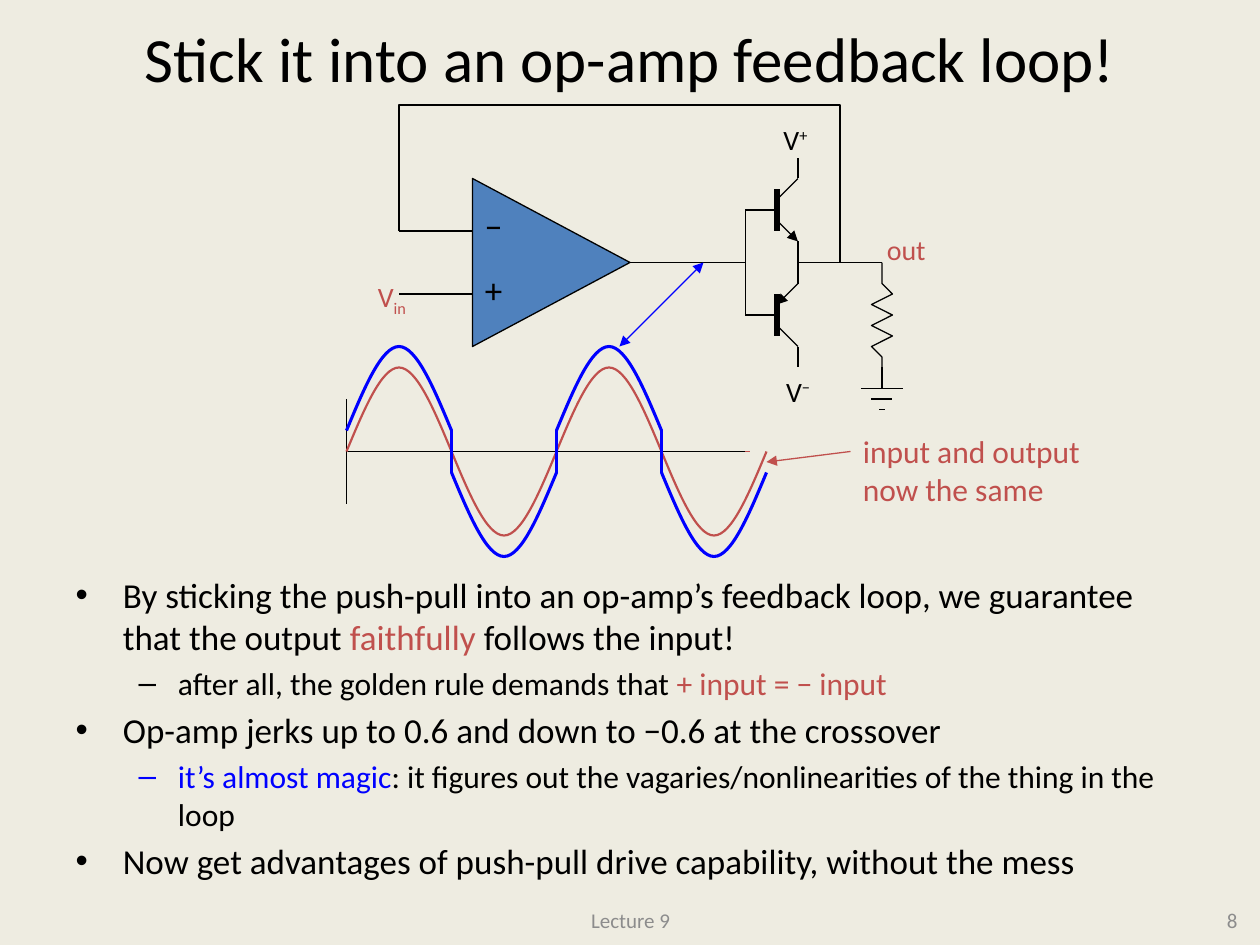
from dataclasses import dataclass
from lxml.etree import SubElement
from pptx import Presentation
from pptx.dml.color import RGBColor
from pptx.enum.shapes import MSO_CONNECTOR as Connector, MSO_SHAPE as Shape
from pptx.enum.text import MSO_ANCHOR as Anchor, MSO_AUTO_SIZE as AutoSize, PP_ALIGN as Align
from pptx.oxml.ns import qn
from pptx.util import Inches, Pt


@dataclass(frozen=True)
class Theme:
    font: str = "Calibri"
    paper: str = "EEECE1"
    ink: str = "000000"
    red: str = "C0504D"
    blue: str = "0000FF"
    amp: str = "4F81BD"
    grey: str = "8C8C8C"
    title: int = 36
    body: tuple = (20, 18)
    sign: int = 20
    label: int = 16
    note: int = 18
    footer: int = 12


T = Theme()
CELL = Inches(1) // 12  # the drawing sits on a grid of twelve cells to the inch

TITLE = "Stick it into an op-amp feedback loop!"
# Each bullet: level, then runs of (text, colour)
BULLETS = [
    (0, [("By sticking the push-pull into an op-amp’s feedback loop, we guarantee that the output ", T.ink),
         ("faithfully", T.red), (" follows the input!", T.ink)]),
    (1, [("after all, the golden rule demands that ", T.ink), ("+ input = − input", T.red)]),
    (0, [("Op-amp jerks up to 0.6 and down to −0.6 at the crossover", T.ink)]),
    (1, [("it’s almost magic", T.blue),
         (": it figures out the vagaries/nonlinearities of the thing in the loop", T.ink)]),
    (0, [("Now get advantages of push-pull drive capability, without the mess", T.ink)]),
]
# Each label: box in inches, paragraphs of (text, baseline shift) runs, size, colour, alignment
LABELS = [
    ((3.75, 1.57, 0.35, 0.43), [[("−", 0)]], T.sign, T.ink, Align.LEFT),
    ((3.75, 2.08, 0.36, 0.43), [[("+", 0)]], T.sign, T.ink, Align.LEFT),
    ((2.85, 2.17, 0.47, 0.37), [[("V", 0), ("in", -25)]], T.label, T.red, Align.RIGHT),
    ((6.94, 1.8, 0.51, 0.37), [[("out", 0)]], T.label, T.red, Align.LEFT),
    ((6.12, 0.92, 0.44, 0.37), [[("V", 0), ("+", 30)]], T.label, T.ink, Align.LEFT),
    ((6.14, 2.92, 0.43, 0.37), [[("V", 0), ("−", 30)]], T.label, T.ink, Align.LEFT),
    ((6.75, 3.38, 2.06, 0.7), [[("input and output", 0)], [("now the same", 0)]],
     T.note, T.red, Align.LEFT),
]
FOOTERS = [((3.42, 7.1, 3.17, 0.4), "Lecture 9", Align.CENTER),
           ((7.59, 7.1, 2.33, 0.4), "8", Align.RIGHT)]

# Circuit parts in grid cells
WIRES = [
    ((45, 28), (38, 28)), ((45, 22), (38, 22)), ((60, 25), (68, 25)),  # op-amp pins
    ((76, 25), (84, 25)), ((71, 20), (71, 30)), ((71, 25), (66, 25)),  # output, bases
    ((84, 35), (84, 37)),
]
GROUND_BARS = [(37, 2), (38, 1), (39, 0.25)]  # row, half width
FEEDBACK = [(38, 22), (38, 10), (80, 10), (80, 25)]
RESISTOR = [(84, 25), (84, 27), *[(85 if i % 2 == 0 else 83, 28 + i) for i in range(6)],
            (84, 34), (84, 35)]
WAVE_LEFT, WAVE_AXIS, HALF_PERIOD, AMPLITUDE = 33, 43, 10, 8
JUMP = 2  # crossover step on each side of the axis

prs = Presentation()
prs.slide_width, prs.slide_height = Inches(10), Inches(7.5)
slide = prs.slides.add_slide(prs.slide_layouts[1])
slide.background.fill.solid()
slide.background.fill.fore_color.rgb = RGBColor.from_string(T.paper)


def place(shape, box):
    shape.left, shape.top, shape.width, shape.height = map(Inches, box)


def write(paragraph, text, *, size, color, shift=0):
    run = paragraph.add_run()
    run.text = text
    run.font.name, run.font.size = T.font, Pt(size)
    run.font.color.rgb = RGBColor.from_string(color)
    if shift:
        run.font._element.set("baseline", str(shift * 1000))


def label(box, lines, *, size, color, align, wrap=False):
    shape = slide.shapes.add_textbox(*map(Inches, box))
    frame = shape.text_frame
    frame.word_wrap = wrap
    if wrap:
        frame.vertical_anchor = Anchor.MIDDLE
    else:
        frame.auto_size = AutoSize.SHAPE_TO_FIT_TEXT
    for i, runs in enumerate(lines):
        paragraph = frame.add_paragraph() if i else frame.paragraphs[0]
        paragraph.alignment = align
        for text, shift in runs:
            write(paragraph, text, size=size, color=color, shift=shift)


def stroke(line, color, width):
    line.width = Pt(width)
    line.color.rgb = RGBColor.from_string(color)


def wire(start, end, color=T.ink, width=0.75, arrows=()):
    """Straight line between grid points; arrows may name headEnd, tailEnd."""
    ends = [round(v * CELL) for v in (*start, *end)]
    connector = slide.shapes.add_connector(Connector.STRAIGHT, *ends)
    stroke(connector.line, color, width)
    properties = connector._element.spPr
    for arrow in arrows:
        SubElement(properties.find(qn("a:ln")), qn(f"a:{arrow}"), type="triangle")
    SubElement(properties, qn("a:effectLst"))


def outline(points, color=T.ink, width=0.75, curved=False):
    """Open outline through grid points; if curved, each three points make a Bézier segment."""
    points = [(round(x * CELL), round(y * CELL)) for x, y in points]
    builder = slide.shapes.build_freeform(*points[0])
    builder.add_line_segments(points[1:], close=False)
    shape = builder.convert_to_shape()
    shape.fill.background()
    shape.shadow.inherit = False
    stroke(shape.line, color, width)
    if curved:
        track = shape._element.find(".//" + qn("a:path"))
        steps = track.findall(qn("a:lnTo"))
        for i in range(0, len(steps), 3):
            curve = SubElement(track, qn("a:cubicBezTo"))
            for step in steps[i:i + 3]:
                curve.append(step[0])
                track.remove(step)


def transistor(row, down):
    """Base at the given row; down is 1 for NPN and -1 for the mirrored PNP."""
    def at(column, offset):
        return column, row + down * offset

    wire(at(74, -2), at(74, 2), width=3)
    wire(at(74, -1), at(76, -3))
    wire(at(76, -3), at(76, -5))
    wire(at(74, 0), at(71, 0))
    wire(at(76, 3), at(76, 5))
    inner, outer = (74, row + 1), (76, row + 3)
    if down < 0:
        inner, outer = at(76, 3), at(74, 1)
    wire(inner, outer, arrows=["tailEnd"])


def wave(color, width, jump=0):
    rise = [0, AMPLITUDE / 2, AMPLITUDE, AMPLITUDE, AMPLITUDE, AMPLITUDE / 2, 0]
    for half in range(4):
        left = WAVE_LEFT + half * HALF_PERIOD
        up = -1 if half % 2 == 0 else 1
        outline([(left + i * HALF_PERIOD / 6, WAVE_AXIS + up * (jump + y))
                 for i, y in enumerate(rise)], color, width, curved=True)
        if jump and half:
            wire((left, WAVE_AXIS - jump), (left, WAVE_AXIS + jump), color, width)


title, body = slide.placeholders
place(title, (0.75, -0.17, 8.5, 1.25))
write(title.text_frame.paragraphs[0], TITLE, size=T.title, color=T.ink)
place(body, (0.5, 4.5, 8.92, 2.75))
for i, (level, runs) in enumerate(BULLETS):
    bullet = body.text_frame.add_paragraph() if i else body.text_frame.paragraphs[0]
    bullet.level = level
    for text, color in runs:
        write(bullet, text, size=T.body[level], color=color)
for box, text, align in FOOTERS:
    label(box, [[(text, 0)]], size=T.footer, color=T.grey, align=align, wrap=True)

amp = slide.shapes.add_shape(Shape.ISOSCELES_TRIANGLE,
                             *[round(v * CELL) for v in (44.5, 17.5, 16, 15)])
amp.rotation = 90
amp.shadow.inherit = False
amp.fill.solid()
amp.fill.fore_color.rgb = RGBColor.from_string(T.amp)
stroke(amp.line, T.ink, 0.75)

for start, end in WIRES:
    wire(start, end)
for row, half_width in GROUND_BARS:
    wire((84 - half_width, row), (84 + half_width, row))
transistor(20, 1)
transistor(30, -1)
outline(RESISTOR)
outline(FEEDBACK)

wire((WAVE_LEFT, 38), (WAVE_LEFT, 48))
wire((33.5, WAVE_AXIS), (71.4, WAVE_AXIS), T.red)
wire((WAVE_LEFT, WAVE_AXIS), (71, WAVE_AXIS))
wave(T.red, 1.25)
wave(T.blue, 1.75, JUMP)
wire((59, 33), (67, 25), T.blue, arrows=["headEnd", "tailEnd"])
wire((81, WAVE_AXIS), (73, WAVE_AXIS + 1), T.red, arrows=["tailEnd"])
for box, lines, size, color, align in LABELS:
    label(box, lines, size=size, color=color, align=align)

prs.save("out.pptx")
